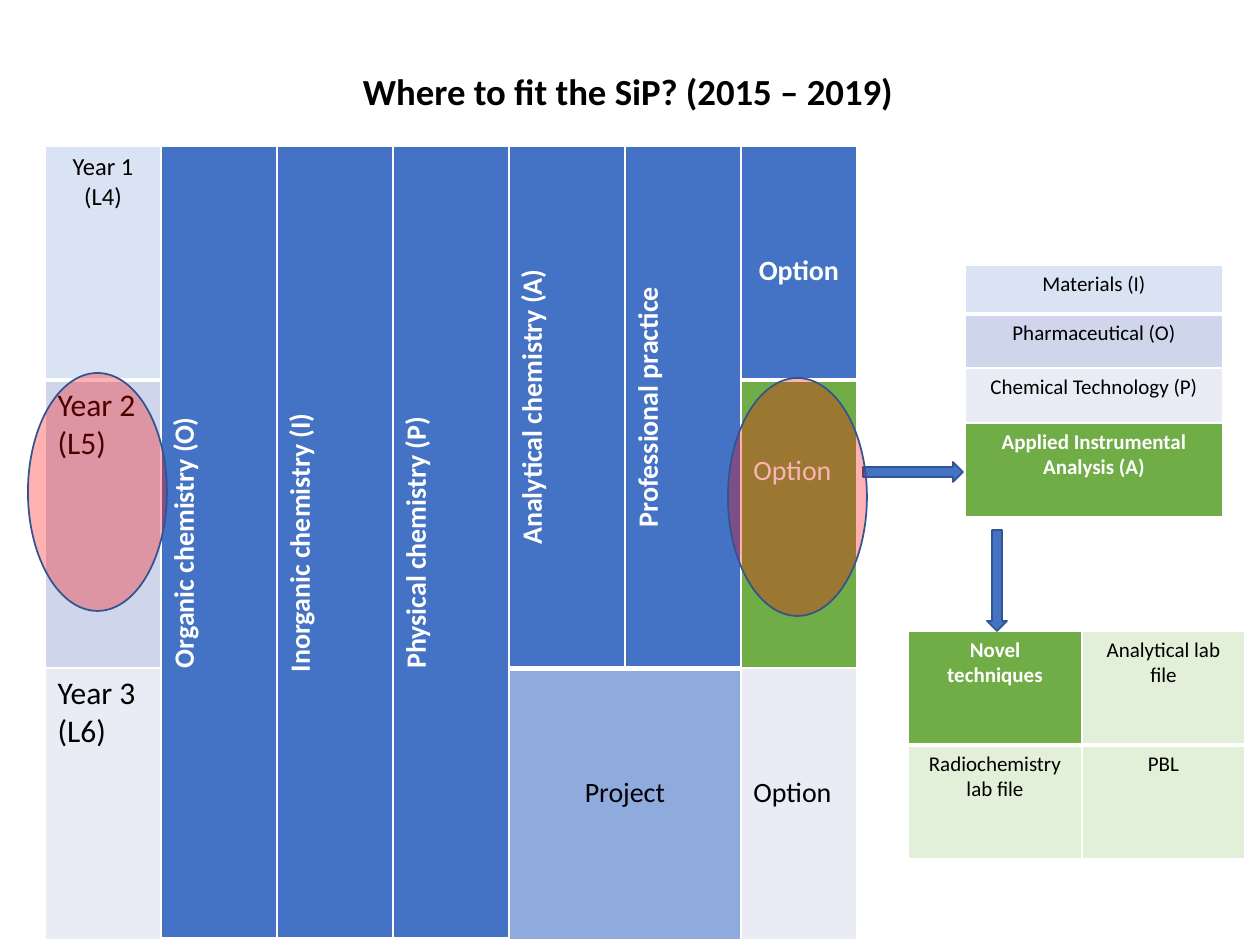
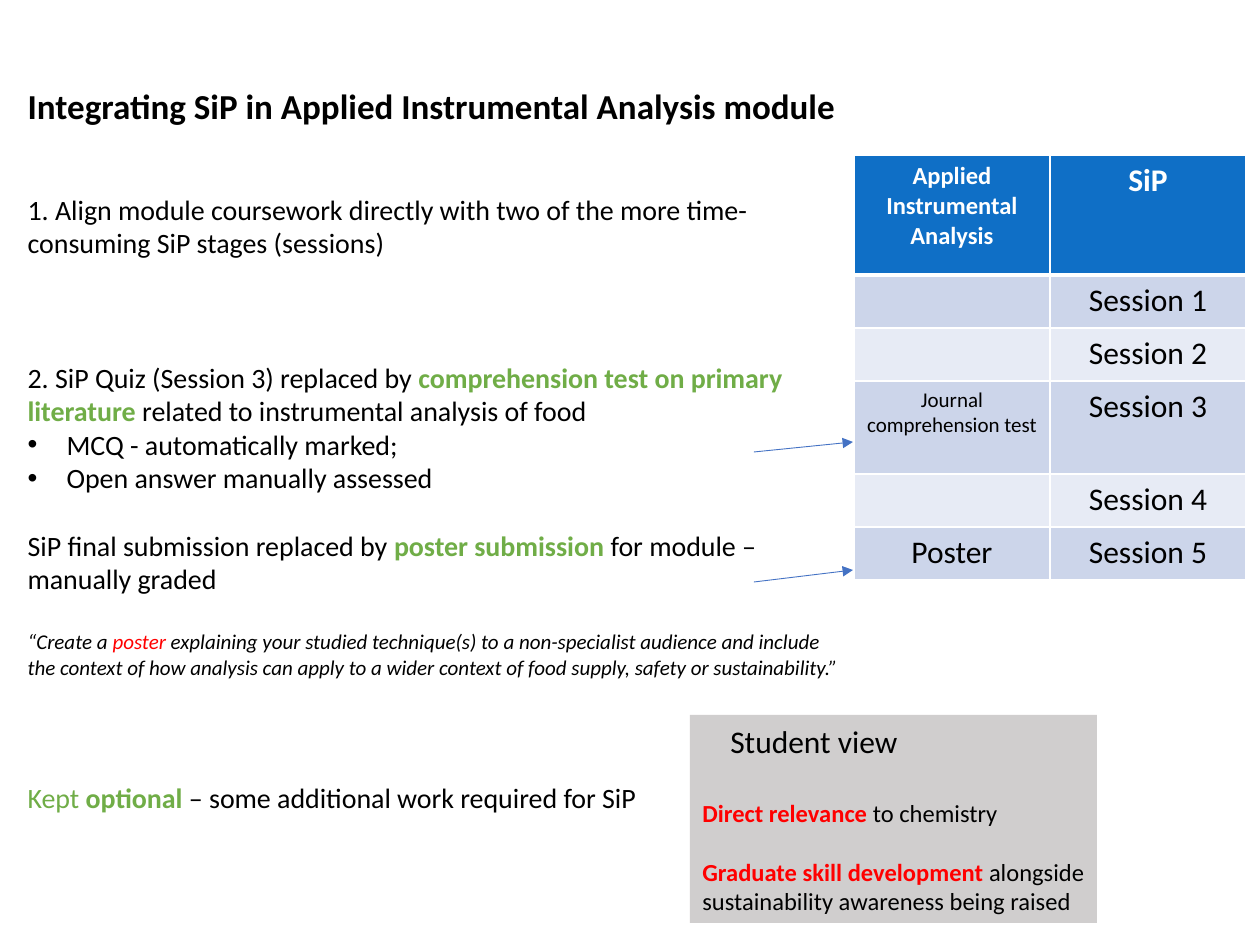
from lxml.etree import SubElement
from pptx import Presentation
from pptx.dml.color import RGBColor
from pptx.enum.shapes import MSO_CONNECTOR, MSO_SHAPE
from pptx.enum.text import MSO_ANCHOR as Anchor, MSO_AUTO_SIZE as AutoSize, PP_ALIGN as Align
from pptx.oxml.ns import qn
from pptx.util import Pt

PX = 7257  # EMU per px, 126 px to the inch
FONT = "Calibri"
BLACK, WHITE, RED = "000000", "FFFFFF", "FF0000"
BLUE, BLUE_EDGE, HEADER_BLUE, MID_BLUE = "4472C4", "325491", "0F6FC6", "8FAADC"
PALE_BLUE, BAND_DARK, BAND_LIGHT = "DAE3F3", "CFD5EA", "E9EBF5"
SESSION_DARK, SESSION_LIGHT = "CCD5EA", "E7EBF5"
GREEN, PALE_GREEN, GREY = "70AD47", "E2F0D9", "D0CECE"
rgb = RGBColor.from_string


def add_spans(para, size, *spans, italic=False):
    """Append (text, colour, bold) spans to a paragraph."""
    for text, colour, bold in spans:
        span = para.add_run()
        span.text = text
        span.font.name, span.font.size = FONT, Pt(size)
        span.font.bold, span.font.italic = bold, italic
        span.font.color.rgb = rgb(colour)


def add_grid(page, left, top, widths, heights, entries):
    """Add a white-ruled table; entries map (row, column) to (text, fill, size, colour, bold)."""
    frame = page.shapes.add_table(len(heights), len(widths), left * PX, top * PX,
                                  sum(widths) * PX, sum(heights) * PX)
    grid = frame.table
    for column, width in zip(grid.columns, widths):
        column.width = width * PX
    for row, height in zip(grid.rows, heights):
        row.height = height * PX
    for (row, column), (text, fill, size, colour, bold) in entries.items():
        cell = grid.cell(row, column)
        props = cell._tc.get_or_add_tcPr()
        # The rule under the first row is the heavy one
        rules = {"a:lnL": 1, "a:lnR": 1, "a:lnT": 3 if row == 1 else 1, "a:lnB": 3 if row == 0 else 1}
        for tag, weight in rules.items():
            rule = SubElement(props, qn(tag), w=str(Pt(weight)))
            SubElement(SubElement(rule, qn("a:solidFill")), qn("a:srgbClr"), val=WHITE)
        cell.fill.solid()
        cell.fill.fore_color.rgb = rgb(fill)
        para = cell.text_frame.paragraphs[0]
        para.alignment = Align.CENTER
        if text:
            add_spans(para, size, (text, colour, bold))
    return grid


deck = Presentation()
deck.slide_width, deck.slide_height = 1260 * PX, 945 * PX
fit_page = deck.slides.add_slide(deck.slide_layouts[5])
module_page = deck.slides.add_slide(deck.slide_layouts[1])

# Titles
for page, text, size, align, place in [
    (fit_page, "Where to fit the SiP? (2015 – 2019)", 21, Align.CENTER, (48, 66, 1160, 50)),
    (module_page, "Integrating SiP in Applied Instrumental Analysis module", 20, Align.LEFT,
     (15, 80, 838, 50)),
]:
    title = page.shapes.title
    title.left, title.top, title.width, title.height = [n * PX for n in place]
    title.text_frame.vertical_anchor = Anchor.MIDDLE
    title.text_frame.auto_size = AutoSize.NONE
    para = title.text_frame.paragraphs[0]
    para.alignment = align
    add_spans(para, size, (text, BLACK, True))

# Slide 1: curriculum by year
curriculum = add_grid(fit_page, 45, 146, [116] * 7, [234, 288, 271], {
    (0, 0): ("Year 1 (L4)", PALE_BLUE, 14, BLACK, False),
    (0, 1): ("Organic chemistry (O)", BLUE, 16, WHITE, True),
    (0, 2): ("Inorganic chemistry (I)", BLUE, 16, WHITE, True),
    (0, 3): ("Physical chemistry (P)", BLUE, 16, WHITE, True),
    (0, 4): ("Analytical chemistry (A)", BLUE, 16, WHITE, True),
    (0, 5): ("Professional practice", BLUE, 16, WHITE, True),
    (0, 6): ("Option", BLUE, 16, WHITE, True),
    (1, 0): ("Year 2 (L5)", BAND_DARK, 18, BLACK, False),
    (1, 6): ("Option", GREEN, 16, WHITE, False),
    (2, 0): ("Year 3 (L6)", BAND_LIGHT, 18, BLACK, False),
    (2, 4): ("Project", MID_BLUE, 16, BLACK, False),
    (2, 6): ("Option", BAND_LIGHT, 16, BLACK, False),
})
for column, last_row in zip(range(1, 6), (2, 2, 2, 1, 1)):
    subject = curriculum.cell(0, column)
    subject.merge(curriculum.cell(last_row, column))
    subject._tc.get_or_add_tcPr().set("vert", "vert270")
curriculum.cell(2, 4).merge(curriculum.cell(2, 5))
for row, column, lines_down in [(0, 6, 3), (1, 6, 2), (2, 4, 3), (2, 6, 3)]:
    curriculum.cell(row, column).margin_top = (6 + 34 * lines_down) * PX
for row, column in [(1, 0), (1, 6), (2, 0), (2, 6)]:
    curriculum.cell(row, column).text_frame.paragraphs[0].alignment = Align.LEFT

# Option modules and the parts of the chosen one
add_grid(fit_page, 965, 265, [258], [49, 54, 55, 94], {
    (0, 0): ("Materials (I)", PALE_BLUE, 12, BLACK, False),
    (1, 0): ("Pharmaceutical (O)", BAND_DARK, 12, BLACK, False),
    (2, 0): ("Chemical Technology (P)", BAND_LIGHT, 12, BLACK, False),
    (3, 0): ("Applied Instrumental Analysis (A)", GREEN, 12, WHITE, True),
})
add_grid(fit_page, 908, 631, [174, 163], [114, 114], {
    (0, 0): ("Novel techniques", GREEN, 12, WHITE, True),
    (0, 1): ("Analytical lab file", PALE_GREEN, 12, BLACK, False),
    (1, 0): ("Radiochemistry lab file", PALE_GREEN, 12, BLACK, False),
    (1, 1): ("PBL", PALE_GREEN, 12, BLACK, False),
})

# Arrows and see-through highlights
for kind, place, colour, alpha in [
    (MSO_SHAPE.RIGHT_ARROW, (863, 462, 100, 20), BLUE, None),
    (MSO_SHAPE.DOWN_ARROW, (987, 530, 20, 101), BLUE, None),
    (MSO_SHAPE.OVAL, (28, 373, 139, 238), RED, 30),
    (MSO_SHAPE.OVAL, (728, 378, 139, 238), RED, 30),
]:
    marker = fit_page.shapes.add_shape(kind, *[n * PX for n in place])
    marker.shadow.inherit = False
    marker.fill.solid()
    marker.fill.fore_color.rgb = rgb(colour)
    marker.line.color.rgb = rgb(BLUE_EDGE)
    marker.line.width = Pt(1)
    if alpha:
        tint = marker._element.spPr.find(qn("a:solidFill"))[0]
        SubElement(tint, qn("a:alpha"), val=str(alpha * 1000))

# Slide 2: body as (space before, size, bullet, spans)
body = module_page.placeholders[1]
body.left, body.top, body.width, body.height = [n * PX for n in (15, 186, 838, 678)]
frame = body.text_frame
frame.auto_size = AutoSize.NONE
frame.vertical_anchor = Anchor.TOP
points = [
    (0, 16, False, [("1. Align module coursework directly with two of the more time-consuming "
                     "SiP stages (sessions)", BLACK, False)]),
    (57.6, 16, False, [("2. SiP Quiz (Session 3) replaced by ", BLACK, False),
                       ("comprehension test on primary literature ", GREEN, True),
                       ("related to instrumental analysis of food", BLACK, False)]),
    (0, 16, True, [("MCQ - automatically marked;", BLACK, False)]),
    (0, 16, True, [("Open answer manually assessed", BLACK, False)]),
    (19.2, 16, False, [("SiP final submission replaced by ", BLACK, False),
                       ("poster submission ", GREEN, True),
                       ("for module – manually graded", BLACK, False)]),
    (19.2, 12, False, [("“Create a ", BLACK, False), ("poster", RED, False),
                       (" explaining your studied technique(s) to a non-specialist audience and "
                        "include the context of how analysis can apply to a wider context of food "
                        "supply, safety or sustainability.”", BLACK, False)]),
    (58, 16, False, [("Kept ", GREEN, False), ("optional", GREEN, True),
                     (" – some additional work required for SiP", BLACK, False)]),
]
for index, (space, size, bullet, spans) in enumerate(points):
    para = frame.add_paragraph() if index else frame.paragraphs[0]
    para.space_before = Pt(space)
    indent = 39 * PX if bullet else 0
    props = para._p.get_or_add_pPr()
    props.set("marL", str(indent))
    props.set("indent", str(-indent))
    if bullet:
        SubElement(props, qn("a:buFont"), typeface="Arial")
        SubElement(props, qn("a:buChar"), char="•")
    else:
        SubElement(props, qn("a:buNone"))
    add_spans(para, size, *spans, italic=size == 12)

# Sessions matched to coursework
sessions = {
    (0, 0): ("Applied Instrumental Analysis", HEADER_BLUE, 14, WHITE, True),
    (0, 1): ("SiP", HEADER_BLUE, 18, WHITE, True),
}
coursework = {3: ("Journal comprehension test", 12), 5: ("Poster", 18)}
for number in range(1, 6):
    fill = SESSION_DARK if number % 2 else SESSION_LIGHT
    text, size = coursework.get(number, ("", 18))
    sessions[number, 0] = (text, fill, size, BLACK, False)
    sessions[number, 1] = (f"Session {number}", fill, 18, BLACK, False)
add_grid(module_page, 854, 155, [196, 196], [120, 53, 53, 93, 53, 53], sessions)

# Student view
view = module_page.shapes.add_shape(MSO_SHAPE.RECTANGLE, *[n * PX for n in (690, 715, 407, 208)])
view.shadow.inherit = False
view.fill.solid()
view.fill.fore_color.rgb = rgb(GREY)
view.line.fill.background()
frame = view.text_frame
frame.word_wrap = True
frame.vertical_anchor = Anchor.MIDDLE
for index, (space, size, spans) in enumerate([
    (0, 18, [("Student view", BLACK, False)]),
    (21.5, 14, [("Direct relevance ", RED, True), ("to chemistry", BLACK, False)]),
    (17, 14, [("Graduate skill development ", RED, True),
              ("alongside sustainability awareness being raised", BLACK, False)]),
]):
    para = frame.add_paragraph() if index else frame.paragraphs[0]
    para.alignment = Align.LEFT
    para.space_before = Pt(space)
    add_spans(para, size, *spans)
frame.paragraphs[0]._p.get_or_add_pPr().set("marL", str(28 * PX))

# Arrows from the text to the matching sessions
for start_y, end_y in [(452, 442), (582, 570)]:
    arrow = module_page.shapes.add_connector(MSO_CONNECTOR.STRAIGHT, 754 * PX, start_y * PX,
                                             853 * PX, end_y * PX)
    arrow.line.color.rgb = rgb(BLUE)
    arrow.line.width = Pt(0.5)
    SubElement(arrow.line._get_or_add_ln(), qn("a:tailEnd"), type="triangle")
    SubElement(arrow._element.spPr, qn("a:effectLst"))

deck.save("out.pptx")
